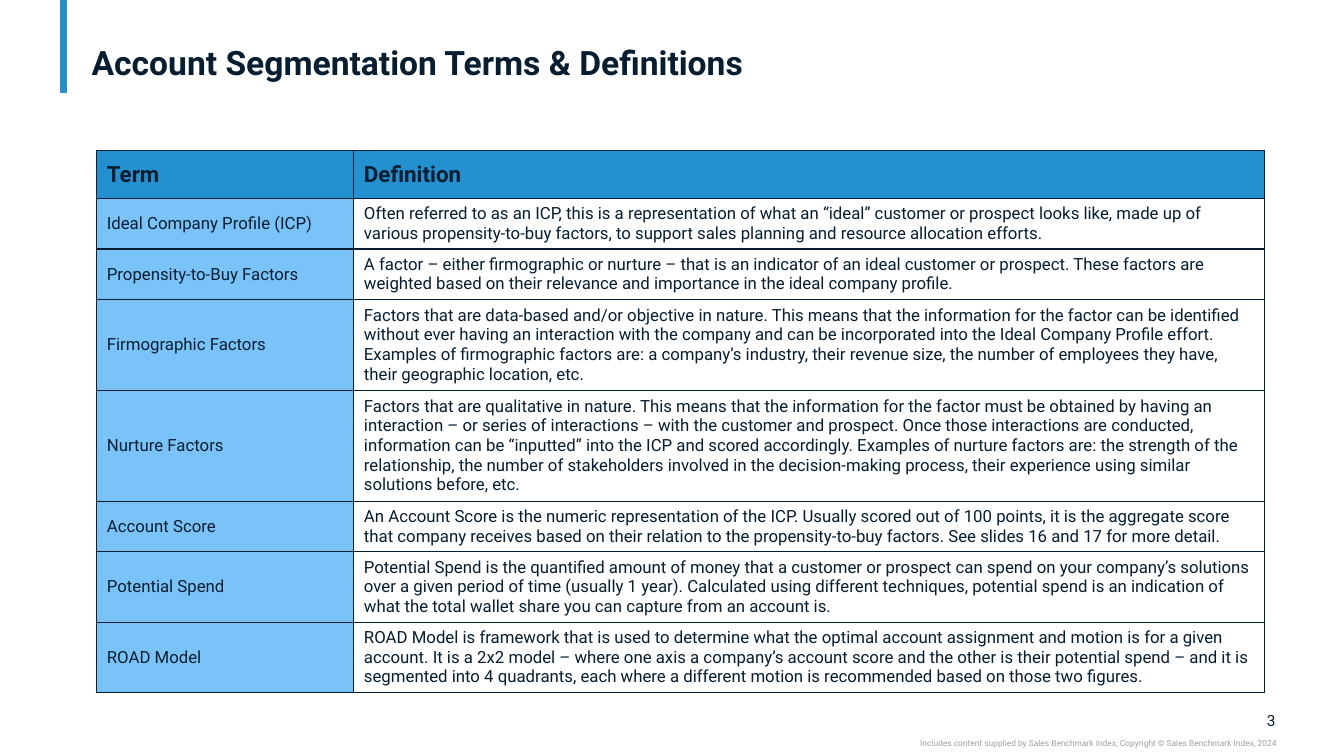
from lxml import etree
from pptx import Presentation
from pptx.dml.color import RGBColor
from pptx.enum.shapes import MSO_CONNECTOR
from pptx.enum.text import MSO_ANCHOR, PP_ALIGN
from pptx.oxml.ns import qn
from pptx.util import Emu, Pt

LINE = MSO_CONNECTOR.STRAIGHT
TOP, MID = MSO_ANCHOR.TOP, MSO_ANCHOR.MIDDLE
LEFT, RIGHT = PP_ALIGN.LEFT, PP_ALIGN.RIGHT
FONT = "Roboto"
INK, BLUE, SKY, GREY = "071E31", "2391CF", "7AC3F8", "A0A0A0"
TITLE = "Account Segmentation Terms & Definitions"
CREDIT = ("Includes content supplied by Sales Benchmark Index; "
          "Copyright © Sales Benchmark Index, 2024")
COLS = [255, 903]
HEAD = ("Term", "Definition", 48)
TERMS = [
    ("Ideal Company Profile (ICP)",
     "Often referred to as an ICP, this is a representation of what an “ideal” customer or "
     "prospect looks like, made up of various propensity-to-buy factors, to support sales "
     "planning and resource allocation efforts.", 49),
    ("Propensity-to-Buy Factors",
     "A factor – either firmographic or nurture – that is an indicator of an ideal customer or "
     "prospect. These factors are weighted based on their relevance and importance in the ideal "
     "company profile.", 49),
    ("Firmographic Factors",
     "Factors that are data-based and/or objective in nature. This means that the information "
     "for the factor can be identified without ever having an interaction with the company and "
     "can be incorporated into the Ideal Company Profile effort. Examples of firmographic "
     "factors are: a company’s industry, their revenue size, the number of employees they have, "
     "their geographic location, etc.", 88),
    ("Nurture Factors",
     "Factors that are qualitative in nature. This means that the information for the factor "
     "must be obtained by having an interaction – or series of interactions – with the customer "
     "and prospect. Once those interactions are conducted, information can be “inputted” into "
     "the ICP and scored accordingly. Examples of nurture factors are: the strength of the "
     "relationship, the number of stakeholders involved in the decision-making process, their "
     "experience using similar solutions before, etc.", 107),
    ("Account Score",
     "An Account Score is the numeric representation of the ICP. Usually scored out of 100 "
     "points, it is the aggregate score that company receives based on their relation to the "
     "propensity-to-buy factors. See slides 16 and 17 for more detail.", 49),
    ("Potential Spend",
     "Potential Spend is the quantified amount of money that a customer or prospect can spend "
     "on your company’s solutions over a given period of time (usually 1 year). Calculated using "
     "different techniques, potential spend is an indication of what the total wallet share you "
     "can capture from an account is.", 69),
    ("ROAD Model",
     "ROAD Model is framework that is used to determine what the optimal account assignment and "
     "motion is for a given account. It is a 2x2 model – where one axis a company’s account "
     "score and the other is their potential spend – and it is segmented into 4 quadrants, each "
     "where a different motion is recommended based on those two figures.", 69),
]


def px(n):
    """Turn px into EMU, at 100 px to the inch."""
    return Emu(n * 9144)


def color(code):
    """Turn a hex string into a colour."""
    return RGBColor.from_string(code)


def write(frame, text, size, ink=INK, bold=False, align=LEFT):
    """Add one run to the first paragraph of a frame and return the paragraph."""
    para = frame.paragraphs[0]
    para.alignment = align
    run = para.add_run()
    run.text = text
    font = run.font
    font.name, font.size, font.bold = FONT, Pt(size), bold
    font.color.rgb = color(ink)
    return para


def label(slide, box, text, size, pad=(0, 0), anchor=TOP, **look):
    """Place a text box and return its paragraph."""
    frame = slide.shapes.add_textbox(*map(px, box)).text_frame
    frame.word_wrap = True
    frame.vertical_anchor = anchor
    frame.margin_left = frame.margin_right = px(pad[0])
    frame.margin_top = frame.margin_bottom = px(pad[1])
    return write(frame, text, size, **look)


def header(slide, x, y, w, h):
    """Draw the accent bar and the title."""
    bar = slide.shapes.add_connector(LINE, px(x), px(y), px(x), px(y + 92))
    bar.line.color.rgb = color(BLUE)
    bar.line.width = Pt(5)
    etree.SubElement(bar._element.spPr, qn("a:effectLst"))
    para = label(slide, (x + 18, y + 4, w - 18, h - 4), TITLE, 24, (10, 5), MID, bold=True)
    para.line_spacing = 0.9


def edge(cell):
    """Draw a thin dark border on all four sides of a cell."""
    props = cell._tc.get_or_add_tcPr()
    for side in "LRTB":
        line = etree.SubElement(props, qn(f"a:ln{side}"), w=str(Pt(1)))
        fill = etree.SubElement(line, qn("a:solidFill"))
        etree.SubElement(fill, qn("a:srgbClr"), val=INK)


def glossary(slide, x, y):
    """Draw the table of terms and definitions."""
    rows = [HEAD] + TERMS
    size = sum(COLS), sum(row[-1] for row in rows)
    shape = slide.shapes.add_table(len(rows), len(COLS), *map(px, (x, y, *size)))
    table = shape.table
    table.horz_banding = table.first_row = False
    for col, width in zip(table.columns, COLS):
        col.width = px(width)
    for i, (*texts, height) in enumerate(rows):
        table.rows[i].height = px(height)
        for j, text in enumerate(texts):
            cell = table.cell(i, j)
            cell.vertical_anchor = MID
            cell.margin_left = cell.margin_right = px(10)
            cell.margin_top = cell.margin_bottom = px(5)
            edge(cell)
            if i and j:
                cell.fill.background()
            else:
                cell.fill.solid()
                cell.fill.fore_color.rgb = color(SKY if i else BLUE)
            write(cell.text_frame, text, 12 if i else 16, bold=not i)


def footer(slide, x, y, w):
    """Draw the page number and the credit line, flush right."""
    label(slide, (x + w - 34, y, 33, 19), "3", 11, anchor=MID, align=RIGHT)
    label(slide, (x, y + 27, w, 10), CREDIT, 6, ink=GREY, align=RIGHT)


def main():
    """Build the slide and save it."""
    deck = Presentation()
    deck.slide_width, deck.slide_height = px(1333), px(750)
    slide = deck.slides.add_slide(deck.slide_layouts[6])
    header(slide, 63, 0, 1226, 124)
    glossary(slide, 96, 149)
    footer(slide, 750, 705, 516)
    deck.save("out.pptx")


if __name__ == "__main__":
    main()
